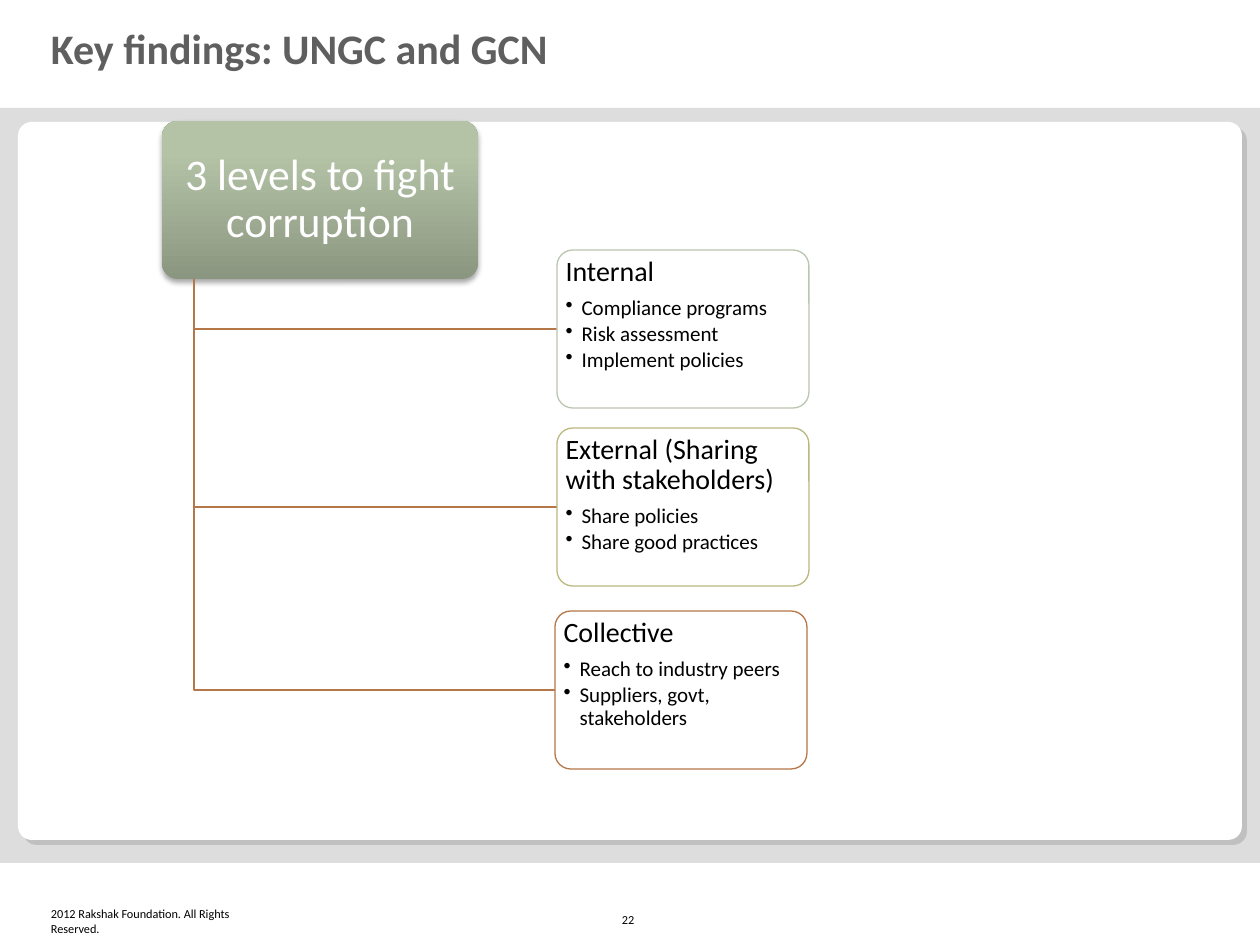
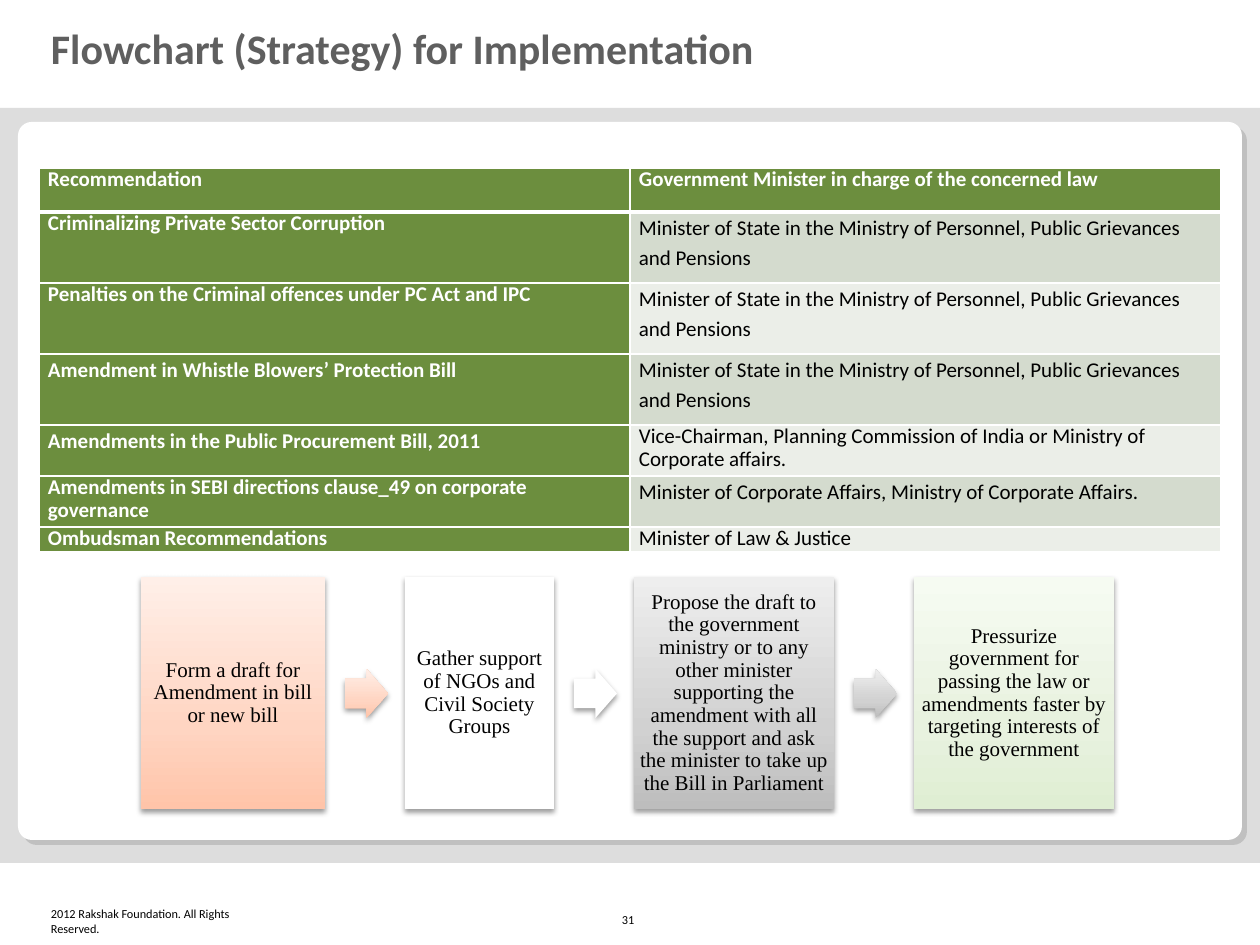
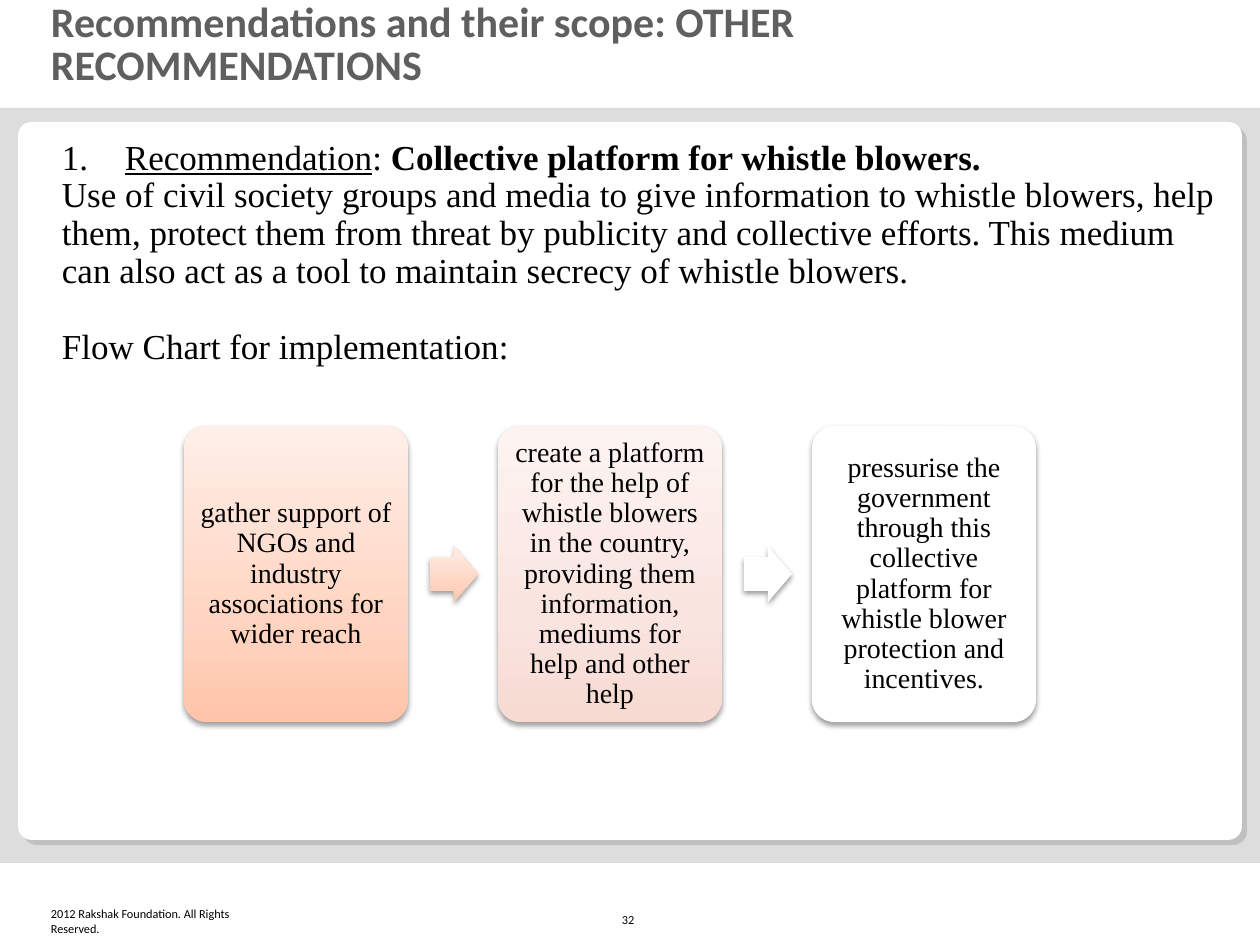
from dataclasses import dataclass
from typing import NamedTuple

from lxml import etree
from pptx import Presentation
from pptx.dml.color import RGBColor
from pptx.enum.shapes import MSO_SHAPE
from pptx.enum.text import MSO_ANCHOR, PP_ALIGN
from pptx.oxml.ns import qn
from pptx.util import Pt

PX = 914400 / 126
SLIDE_WIDTH, SLIDE_HEIGHT = 1260, 945

RECT, ROUNDED = MSO_SHAPE.RECTANGLE, MSO_SHAPE.ROUNDED_RECTANGLE
RIGHT_ARROW = MSO_SHAPE.RIGHT_ARROW
LEFT, CENTER = PP_ALIGN.LEFT, PP_ALIGN.CENTER
TOP, MIDDLE, BOTTOM = MSO_ANCHOR.TOP, MSO_ANCHOR.MIDDLE, MSO_ANCHOR.BOTTOM

BLACK = RGBColor(0x00, 0x00, 0x00)
WHITE = RGBColor(0xFF, 0xFF, 0xFF)
TITLE_GREY = RGBColor(0x5F, 0x5F, 0x5F)
BAND_GREY = RGBColor(0xDD, 0xDD, 0xDD)
PANEL_SHADE = RGBColor(0xC0, 0xC0, 0xC0)
BROWN = RGBColor(0xB5, 0x76, 0x48)
SAGE = RGBColor(0xBA, 0xC6, 0xAF)
OLIVE = RGBColor(0xBA, 0xB8, 0x7F)
TABLE_GREEN = RGBColor(0x6C, 0x8E, 0x3E)
ROW_DARK = RGBColor(0xD4, 0xDB, 0xCE)
ROW_LIGHT = RGBColor(0xEB, 0xEE, 0xE8)


class Stop(NamedTuple):
    percent: int
    color: RGBColor


def fade(*colors: str, middle: int = 35) -> tuple[Stop, ...]:
    """Three gradient stops, listed from the bottom up."""
    return tuple(Stop(percent, RGBColor.from_string(color))
                 for percent, color in zip((0, middle, 100), colors))


PLAIN_WHITE = (Stop(0, WHITE),)
MOSS = fade("8B9680", "B4C3A6", "B5C5A6", middle=80)
PEACH = fade("FFC4A9", "FFD5C2", "FFEFE8")
ROSE = fade("F7DAD2", "F9E4DF", "FDF4F2")
SILVER = fade("BDBDBD", "D1D1D1", "EEEEEE")
MINT = fade("DFEED3", "E8F2DF", "F6FBF2")


class Box(NamedTuple):
    left: int
    top: int
    width: int
    height: int

    def emu(self) -> list[int]:
        return [px(length) for length in self]


class TextStyle(NamedTuple):
    size: int
    color: RGBColor = BLACK
    font: str = "Calibri"
    bold: bool = False
    underline: bool = False


TITLE = TextStyle(24, TITLE_GREY, bold=True)
SMALL_PRINT = TextStyle(7)
ROOT_TEXT = TextStyle(25, WHITE)
LEVEL_NAME, LEVEL_ACTION = TextStyle(16), TextStyle(12)
TABLE_LABEL, TABLE_VALUE = TextStyle(12, WHITE, bold=True), TextStyle(12)
BODY = TextStyle(20, font="Times New Roman")
STEP_SMALL = BODY._replace(size=12)
STEP_LARGE = BODY._replace(size=16)


@dataclass
class Level:
    name: str
    actions: list[str]
    left: int
    top: int
    outline: RGBColor


@dataclass
class Recommendation:
    label: str
    minister: str
    height: int
    label_spacing: float = 0.9
    minister_spacing: float = 1.15


@dataclass
class Step:
    text: str
    width: int
    fill: tuple[Stop, ...]
    arrow: tuple[Stop, ...] | None = None


@dataclass
class Flow:
    left: int
    top: int
    height: int
    gap: int
    outline: int
    inset: int
    style: TextStyle
    arrow: Box  # left and top are offsets from the gap and the middle line
    steps: list[Step]


LEVELS = [
    Level("Internal",
          ["Compliance programs", "Risk assessment", "Implement policies"],
          557, 250, SAGE),
    Level("External (Sharing with stakeholders)",
          ["Share policies", "Share good practices"], 557, 428, OLIVE),
    Level("Collective",
          ["Reach to industry peers", "Suppliers, govt, stakeholders"],
          555, 611, BROWN),
]

PERSONNEL = ("Minister of State in the Ministry of Personnel, "
             "Public Grievances and Pensions")
RECOMMENDATIONS = [
    Recommendation("Recommendation",
                   "Government Minister in charge of the concerned law",
                   44, minister_spacing=0.9),
    Recommendation("Criminalizing Private Sector Corruption", PERSONNEL, 71),
    Recommendation("Penalties on the Criminal offences under PC Act and IPC",
                   PERSONNEL, 71),
    Recommendation("Amendment in Whistle Blowers’ Protection Bill",
                   PERSONNEL, 71, label_spacing=1.15),
    Recommendation("Amendments in the Public Procurement Bill, 2011",
                   "Vice-Chairman, Planning Commission of India or Ministry "
                   "of Corporate affairs.", 51, 1.15, 0.9),
    Recommendation("Amendments in SEBI directions clause_49 on corporate "
                   "governance",
                   "Minister of Corporate Affairs, Ministry of Corporate "
                   "Affairs.", 51),
    Recommendation("Ombudsman Recommendations", "Minister of Law & Justice",
                   25, minister_spacing=0.9),
]

LAW_FLOW = Flow(141, 577, 232, 80, RECT, 6, STEP_SMALL, Box(20, -24, 43, 49), [
    Step("Form a draft for Amendment in bill or new bill", 184, PEACH, PEACH),
    Step("Gather support of NGOs and Civil Society Groups", 149,
         PLAIN_WHITE, PLAIN_WHITE),
    Step("Propose the draft to the government ministry or to any other "
         "minister supporting the amendment with all the support and ask the "
         "minister to take up the Bill in Parliament", 200, SILVER, SILVER),
    Step("Pressurize government for passing the law or amendments faster by "
         "targeting interests of the government", 200, MINT),
])

PLATFORM_FLOW = Flow(184, 426, 296, 90, ROUNDED, 9, STEP_LARGE,
                     Box(22, -28, 48, 56), [
    Step("gather support of NGOs and industry associations for wider reach",
         224, PEACH, PEACH),
    Step("create a platform for the help of whistle blowers in the country, "
         "providing them information, mediums for help and other help",
         224, ROSE, PLAIN_WHITE),
    Step("pressurise the government through this collective platform for "
         "whistle blower protection and incentives.", 224, PLAIN_WHITE),
])


def px(length: float) -> int:
    return round(length * PX)


def add_run(paragraph, text: str, style: TextStyle) -> None:
    run = paragraph.add_run()
    run.text = text
    font = run.font
    font.size, font.name = Pt(style.size), style.font
    font.bold, font.underline = style.bold, style.underline
    font.color.rgb = style.color


def set_frame(frame, anchor, inset_x: int, inset_y: int) -> None:
    frame.word_wrap = True
    frame.vertical_anchor = anchor
    frame.margin_left = frame.margin_right = px(inset_x)
    frame.margin_top = frame.margin_bottom = px(inset_y)


def format_paragraph(paragraph, align=LEFT, spacing: float = 0.9):
    paragraph.alignment = align
    paragraph.line_spacing = spacing
    return paragraph


def add_marker(paragraph, tag: str, indent: int, **attributes: str) -> None:
    """Give the paragraph a hanging bullet or number."""
    properties = paragraph._p.get_or_add_pPr()
    properties.set("marL", str(px(indent)))
    properties.set("indent", str(-px(indent)))
    etree.SubElement(properties, qn(tag), attributes)


def add_label(slide, box: Box, text: str, style: TextStyle, anchor,
              inset_x: int, inset_y: int, spacing: float = 1.0) -> None:
    frame = slide.shapes.add_textbox(*box.emu()).text_frame
    set_frame(frame, anchor, inset_x, inset_y)
    add_run(format_paragraph(frame.paragraphs[0], LEFT, spacing), text, style)


def add_block(slide, kind: int, box: Box, fill: tuple[Stop, ...],
              adjustments: tuple[float, ...] = ()):
    """A preset shape without line or shadow, plain or fading upwards."""
    block = slide.shapes.add_shape(kind, *box.emu())
    for index, value in enumerate(adjustments):
        block.adjustments[index] = value
    if len(fill) == 1:
        block.fill.solid()
        block.fill.fore_color.rgb = fill[0].color
    else:
        block.fill.gradient()
        block.fill.gradient_angle = 90
        stops = block._element.spPr.find(qn("a:gradFill")).find(qn("a:gsLst"))
        stops.clear()
        for percent, color in fill:
            stop = etree.SubElement(stops, qn("a:gs"), pos=str(percent * 1000))
            etree.SubElement(stop, qn("a:srgbClr"), val=str(color))
    block.line.fill.background()
    block.shadow.inherit = False
    return block


def drop_shadow(block, opacity: int, distance: float) -> None:
    effects = block._element.spPr.find(qn("a:effectLst"))
    shadow = etree.SubElement(effects, qn("a:outerShdw"), blurRad=str(Pt(3.1)),
                              dist=str(Pt(distance)), dir="5400000",
                              rotWithShape="0")
    color = etree.SubElement(shadow, qn("a:srgbClr"), val=str(BLACK))
    etree.SubElement(color, qn("a:alpha"), val=str(opacity * 1000))


def center_text(block, text: str, style: TextStyle, inset: int) -> None:
    frame = block.text_frame
    set_frame(frame, MIDDLE, inset, inset)
    add_run(format_paragraph(frame.paragraphs[0], CENTER), text, style)


def add_framed_slide(deck, title: str, number: str, title_top: int = 24):
    """A slide with the grey band, white panel, title and footer."""
    slide = deck.slides.add_slide(deck.slide_layouts[6])
    add_block(slide, RECT, Box(0, 108, SLIDE_WIDTH, 755), (Stop(0, BAND_GREY),))
    for left, top, color in ((23, 127, PANEL_SHADE), (18, 122, WHITE)):
        add_block(slide, ROUNDED, Box(left, top, 1224, 718),
                  (Stop(0, color),), (0.019,))
    add_label(slide, Box(51, 906, 208, 30),
              "2012 Rakshak Foundation. All Rights Reserved.",
              SMALL_PRINT, BOTTOM, 0, 0)
    add_label(slide, Box(39, title_top, 1000, 55), title, TITLE, MIDDLE,
              12, 6, 0.85)
    add_label(slide, Box(610, 890, 40, 43), number, SMALL_PRINT, BOTTOM, 12, 6)
    return slide


def add_level(slide, level: Level, trunk_x: int, trunk_top: int) -> None:
    card = Box(level.left, level.top, 252, 158)
    middle = card.top + card.height // 2
    builder = slide.shapes.build_freeform(px(trunk_x), px(trunk_top))
    builder.add_line_segments([(px(trunk_x), px(middle)),
                               (px(card.left), px(middle))], close=False)
    branch = builder.convert_to_shape()
    branch.fill.background()
    branch.shadow.inherit = False
    block = add_block(slide, ROUNDED, card, PLAIN_WHITE, (0.1,))
    for outlined, color in ((branch, BROWN), (block, level.outline)):
        outlined.line.color.rgb = color
        outlined.line.width = Pt(0.75)

    frame = block.text_frame
    set_frame(frame, TOP, 4, 3)
    heading = format_paragraph(frame.paragraphs[0])
    heading.space_after = Pt(5.6)
    add_run(heading, level.name, LEVEL_NAME)
    for action in level.actions:
        item = format_paragraph(frame.add_paragraph())
        item.space_after = Pt(1.8)
        add_marker(item, "a:buChar", 16, char="•")
        add_run(item, action, LEVEL_ACTION)


def add_flow(slide, flow: Flow) -> None:
    left = flow.left
    middle = flow.top + flow.height // 2
    for step in flow.steps:
        block = add_block(slide, flow.outline,
                          Box(left, flow.top, step.width, flow.height),
                          step.fill, (0.1,) if flow.outline == ROUNDED else ())
        drop_shadow(block, 38, 1.6)
        center_text(block, step.text, flow.style, flow.inset)
        left += step.width
        if step.arrow:
            offset = flow.arrow
            arrow = add_block(slide, RIGHT_ARROW,
                              offset._replace(left=left + offset.left,
                                              top=middle + offset.top),
                              step.arrow, (0.6, 0.5))
            drop_shadow(arrow, 38, 1.6)
        left += flow.gap


def set_borders(cell, top: int, bottom: int) -> None:
    properties = cell._tc.get_or_add_tcPr()
    for side, width in (("L", 1), ("R", 1), ("T", top), ("B", bottom)):
        line = etree.SubElement(properties, qn(f"a:ln{side}"), w=str(Pt(width)))
        fill = etree.SubElement(line, qn("a:solidFill"))
        etree.SubElement(fill, qn("a:srgbClr"), val=str(WHITE))


def add_recommendations(slide) -> None:
    height = sum(entry.height for entry in RECOMMENDATIONS)
    table = slide.shapes.add_table(len(RECOMMENDATIONS), 2,
                                   *Box(39, 168, 1182, height).emu()).table
    table.first_row = table.horz_banding = False
    for row, entry in enumerate(RECOMMENDATIONS):
        table.rows[row].height = px(entry.height)
        value_fill = ROW_DARK if row % 2 else ROW_LIGHT
        header = row == 0
        label = (entry.label, entry.label_spacing, TABLE_LABEL, TABLE_GREEN)
        minister = (entry.minister, entry.minister_spacing,
                    TABLE_LABEL if header else TABLE_VALUE,
                    TABLE_GREEN if header else value_fill)
        for column, (text, spacing, style, fill) in enumerate((label, minister)):
            cell = table.cell(row, column)
            set_borders(cell, 3 if row == 1 else 1, 3 if header else 1)
            cell.fill.solid()
            cell.fill.fore_color.rgb = fill
            cell.margin_left = cell.margin_right = px(9)
            cell.margin_top = cell.margin_bottom = 0
            paragraph = cell.text_frame.paragraphs[0]
            add_run(format_paragraph(paragraph, LEFT, spacing), text, style)


def add_platform_text(slide) -> None:
    frame = slide.shapes.add_textbox(*Box(50, 134, 1183, 280).emu()).text_frame
    set_frame(frame, TOP, 12, 6)
    heading = format_paragraph(frame.paragraphs[0])
    add_marker(heading, "a:buAutoNum", 63, type="arabicPeriod")
    add_run(heading, "Recommendation", BODY._replace(underline=True))
    add_run(heading, ": ", BODY)
    add_run(heading, "Collective platform for whistle blowers.",
            BODY._replace(bold=True))
    add_run(format_paragraph(frame.add_paragraph()),
            "Use of civil society groups and media to give information to "
            "whistle blowers, help them, protect them from threat by publicity "
            "and collective efforts. This medium can also act as a tool to "
            "maintain secrecy of whistle blowers.", BODY)
    flow_lead = format_paragraph(frame.add_paragraph())
    flow_lead.space_before = Pt(21.5)
    add_run(flow_lead, "Flow Chart for implementation:", BODY)


def main() -> None:
    deck = Presentation()
    deck.slide_width, deck.slide_height = px(SLIDE_WIDTH), px(SLIDE_HEIGHT)

    findings = add_framed_slide(deck, "Key findings: UNGC and GCN", "22")
    root = add_block(findings, ROUNDED, Box(162, 121, 316, 158), MOSS, (0.1,))
    drop_shadow(root, 35, 1.8)
    center_text(root, "3 levels to fight corruption", ROOT_TEXT, 5)
    for level in LEVELS:
        add_level(findings, level, 194, 279)

    strategy = add_framed_slide(
        deck, "Flowchart (Strategy) for Implementation", "31")
    add_recommendations(strategy)
    add_flow(strategy, LAW_FLOW)

    platform = add_framed_slide(
        deck, "Recommendations and their scope: OTHER RECOMMENDATIONS", "32",
        title_top=19)
    add_platform_text(platform)
    add_flow(platform, PLATFORM_FLOW)

    deck.save("out.pptx")


if __name__ == "__main__":
    main()
